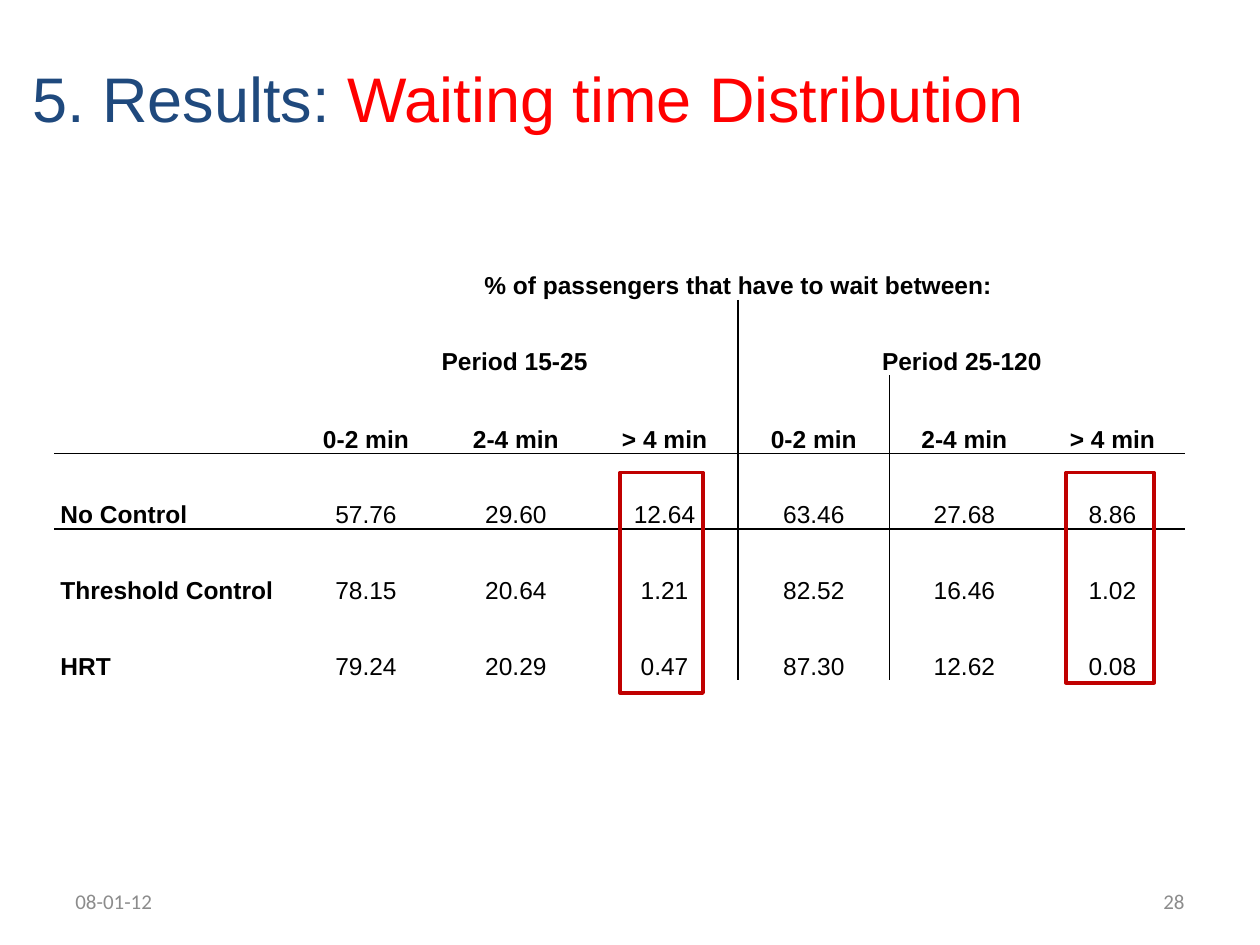
from dataclasses import dataclass

from lxml import etree
from pptx import Presentation
from pptx.dml.color import RGBColor
from pptx.enum.shapes import MSO_SHAPE
from pptx.enum.text import MSO_ANCHOR, PP_ALIGN
from pptx.oxml.ns import qn
from pptx.slide import Slide
from pptx.util import Inches, Pt

LEFT, CENTER, RIGHT = PP_ALIGN.LEFT, PP_ALIGN.CENTER, PP_ALIGN.RIGHT
MIDDLE, BOTTOM = MSO_ANCHOR.MIDDLE, MSO_ANCHOR.BOTTOM
RECTANGLE = MSO_SHAPE.RECTANGLE
PLAIN_TABLE = "{2D5ABB26-0587-4C30-8999-92F81FD0307C}"

COLORS = {
    "navy": "1F497D",
    "red": "FF0000",
    "frame": "C00000",
    "gray": "8C8C8C",
    "black": "000000",
    "white": "FFFFFF",
}
COLUMN_WIDTHS = [1.88, 1.19, 1.19, 1.17, 1.2, 1.19, 1.16]
ROW_HEIGHTS = [0.6, 0.6, 0.62, 0.6, 0.6, 0.6]
WAIT_RANGES = ["0-2 min", "2-4 min", "> 4 min"]
WAITING_TIMES = [
    ["", "% of passengers that have to wait between:", "", "", "", "", ""],
    ["", "Period 15-25", "", "", "Period 25-120", "", ""],
    ["", *WAIT_RANGES, *WAIT_RANGES],
    ["No Control", "57.76", "29.60", "12.64", "63.46", "27.68", "8.86"],
    ["Threshold Control", "78.15", "20.64", "1.21", "82.52", "16.46", "1.02"],
    ["HRT", "79.24", "20.29", "0.47", "87.30", "12.62", "0.08"],
]
HEADER_ROWS = 3
MERGES = [(0, 1, 6), (1, 1, 3), (1, 4, 6)]


@dataclass
class SlideBuilder:
    """Holds the style and the current slide, and draws each kind of element."""

    slide: Slide
    body_font: str = "Arial"
    footer_font: str = "Calibri"
    title_size: int = 36
    table_size: int = 14
    footer_size: int = 12

    def add_run(self, para, text, font, size, color, bold=False):
        span = para.add_run()
        span.text = text
        span.font.name = font
        span.font.size = Pt(size)
        span.font.bold = bold
        span.font.color.rgb = RGBColor.from_string(COLORS[color])

    def add_text(self, place, runs, font, size, align=LEFT):
        box = self.slide.shapes.add_textbox(*map(Inches, place))
        frame = box.text_frame
        frame.word_wrap = True
        frame.vertical_anchor = MIDDLE
        para = frame.paragraphs[0]
        para.alignment = align
        for text, color in runs:
            self.add_run(para, text, font, size, color)

    def add_title(self, place, runs):
        self.add_text(place, runs, self.body_font, self.title_size)

    def add_footer(self, left, text, align):
        place = (left, 6.95, 2.33, 0.4)
        self.add_text(place, [(text, "gray")], self.footer_font, self.footer_size, align)

    def add_frame(self, left, top, width, height):
        shape = self.slide.shapes.add_shape(RECTANGLE, *map(Inches, (left, top, width, height)))
        shape.shadow.inherit = False
        shape.fill.background()
        shape.line.color.rgb = RGBColor.from_string(COLORS["frame"])
        shape.line.width = Pt(2)

    def add_border(self, cell, edge):
        properties = cell._tc.get_or_add_tcPr()
        line = etree.SubElement(properties, qn(f"a:ln{edge}"), w=str(Pt(1)))
        fill = etree.SubElement(line, qn("a:solidFill"))
        etree.SubElement(fill, qn("a:srgbClr"), val=COLORS["black"])

    def fill_cell(self, cell, text, edges, align, bold):
        for edge in edges:
            self.add_border(cell, edge)
        cell.fill.solid()
        cell.fill.fore_color.rgb = RGBColor.from_string(COLORS["white"])
        cell.margin_left = cell.margin_right = Inches(0.05)
        cell.margin_top = cell.margin_bottom = 0
        cell.vertical_anchor = BOTTOM
        if text:
            para = cell.text_frame.paragraphs[0]
            para.alignment = align
            para.line_spacing = 1.15
            self.add_run(para, text, self.body_font, self.table_size, "black", bold)

    def add_table(self, left, top, rows, merges):
        size = (sum(COLUMN_WIDTHS), sum(ROW_HEIGHTS))
        holder = self.slide.shapes.add_table(
            len(rows), len(rows[0]), *map(Inches, (left, top, *size))
        )
        table = holder.table
        table.first_row = table.horz_banding = False
        table._tbl.tblPr.find(qn("a:tableStyleId")).text = PLAIN_TABLE
        for column, width in zip(table.columns, COLUMN_WIDTHS):
            column.width = Inches(width)
        for row, height in zip(table.rows, ROW_HEIGHTS):
            row.height = Inches(height)
        for row, first, last in merges:
            table.cell(row, first).merge(table.cell(row, last))
        for row, texts in enumerate(rows):
            for column, text in enumerate(texts):
                edge_rules = {
                    "L": row > 0 and column == 4,
                    "R": row > 0 and column == 3 or (row, column) == (1, 1),
                    "T": row == HEADER_ROWS,
                    "B": row == HEADER_ROWS - 1,
                }
                edges = [edge for edge, drawn in edge_rules.items() if drawn]
                align = CENTER if column else LEFT
                bold = row < HEADER_ROWS or column == 0
                self.fill_cell(table.cell(row, column), text, edges, align, bold)


def main():
    deck = Presentation()
    deck.slide_width, deck.slide_height = Inches(10), Inches(7.5)
    page = SlideBuilder(deck.slides.add_slide(deck.slide_layouts[6]))
    page.add_title(
        (0.16, 0.23, 9.33, 1.08),
        [("5. Results: ", "navy"), ("Waiting time Distribution", "red")],
    )
    page.add_footer(0.5, "08-01-12", LEFT)
    page.add_table(0.43, 1.78, WAITING_TIMES, MERGES)
    page.add_footer(7.17, "28", RIGHT)
    page.add_frame(4.92, 3.75, 0.66, 1.75)
    page.add_frame(8.46, 3.75, 0.7, 1.67)
    deck.save("out.pptx")


if __name__ == "__main__":
    main()
